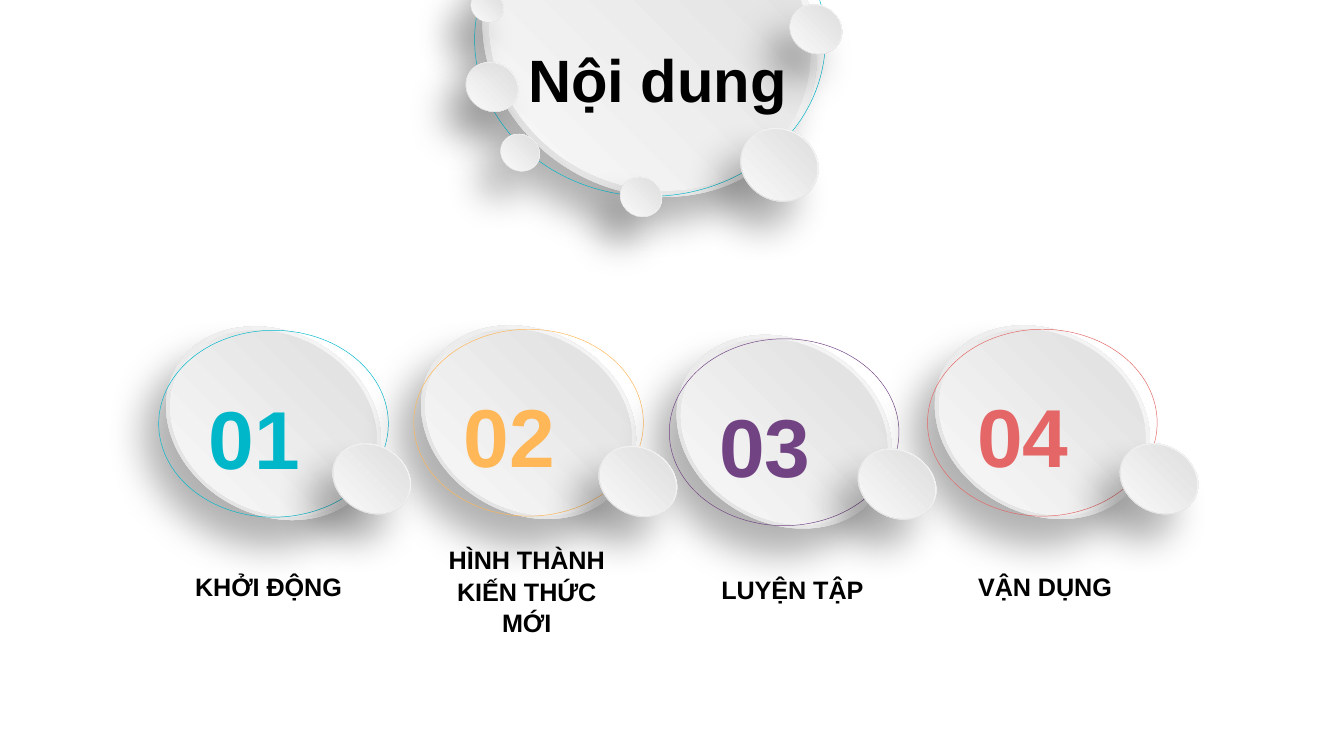
import pptx
import pptx.dml.color
import pptx.enum.shapes
import pptx.enum.text
import pptx.oxml
import pptx.oxml.ns
import pptx.util

Cm, Pt = pptx.util.Cm, pptx.util.Pt
RGBColor = pptx.dml.color.RGBColor
MSO_SHAPE = pptx.enum.shapes.MSO_SHAPE
PP_ALIGN = pptx.enum.text.PP_ALIGN
qn = pptx.oxml.ns.qn

BLACK = RGBColor(0x00, 0x00, 0x00)
WHITE = RGBColor(0xFF, 0xFF, 0xFF)
NEAR_WHITE = RGBColor(0xFE, 0xFE, 0xFE)
GREY = RGBColor(0xD9, 0xD9, 0xD9)
TEAL = RGBColor(0x00, 0xB7, 0xCA)
ORANGE = RGBColor(0xFF, 0xB7, 0x57)
PURPLE = RGBColor(0x71, 0x43, 0x83)
RED = RGBColor(0xE5, 0x66, 0x66)

NS = 'xmlns:a="http://schemas.openxmlformats.org/drawingml/2006/main"'
CORNER_PATH = (f'<a:path {NS} path="circle">'
               '<a:fillToRect l="100000" b="100000"/></a:path>')
SHADOW = (f'<a:outerShdw {NS} blurRad="{Pt(20)}" dist="{Pt(19)}" '
          f'dir="{130 * 60000}" algn="ctr" rotWithShape="0">'
          '<a:srgbClr val="000000"><a:alpha val="30000"/></a:srgbClr>'
          '</a:outerShdw>')

TITLE_KNOBS = [  # left, top, width, height
    (8.79, 1.19, 1.02, 0.91),
    (14.91, 0.1, 1.02, 0.91),
    (11.71, 3.35, 0.81, 0.74),
    (13.97, 2.44, 1.52, 1.35),
    (8.89, -0.15, 0.64, 0.56),
    (9.45, 2.54, 0.76, 0.69),
]
SECTIONS = [  # colour, disc corner, knob corner, label, label box, wrap
    (TEAL, (3.05, 6.27), (6.25, 8.41),
     "KHỞI ĐỘNG", (3.07, 10.64, 4.01, 0.84), True),
    (ORANGE, (7.87, 6.25), (11.28, 8.46),
     "HÌNH THÀNH KIẾN THỨC MỚI", (8.1, 10.13, 3.71, 1.98), True),
    (PURPLE, (12.7, 6.43), (16.18, 8.51),
     "LUYỆN TẬP", (13.36, 10.69, 3.23, 0.84), False),
    (RED, (17.58, 6.25), (21.13, 8.41),
     "VẬN DỤNG", (16.79, 10.64, 5.92, 0.84), True),
]


class SlideBuilder:
    TILT = 29.5
    INNER = 0.96

    def __init__(self, s):
        self.s = s

    def shape(self, kind, box):
        sp = self.s.shapes.add_shape(kind, *map(Cm, box))
        sp.shadow.inherit = False
        return sp

    def gradient_ellipse(self, box, near, far):
        """Tilted ellipse shaded from its top right corner outwards."""
        sp = self.shape(MSO_SHAPE.OVAL, box)
        sp.rotation = self.TILT
        sp.fill.gradient()
        for stop, position, color in zip(sp.fill.gradient_stops, (0, 1), (near, far)):
            stop.position = position
            stop.color.rgb = color
        lin = next(sp._element.iter(qn("a:lin")))
        lin.getparent().replace(lin, pptx.oxml.parse_xml(CORNER_PATH))
        sp.line.fill.background()
        return sp

    def disc(self, x, y, w, h):
        """Raised disc: a shadowed rim with a smaller face centred on it."""
        rim = self.gradient_ellipse((x, y, w, h), WHITE, GREY)
        effects = rim._element.spPr.find(qn("a:effectLst"))
        effects.append(pptx.oxml.parse_xml(SHADOW))
        inset = (1 - self.INNER) / 2
        self.gradient_ellipse((x + w * inset, y + h * inset, w * self.INNER, h * self.INNER),
                              GREY, NEAR_WHITE)

    def ring(self, box, color):
        sp = self.shape(MSO_SHAPE.FLOWCHART_CONNECTOR, box)
        sp.fill.background()
        sp.line.color.rgb = color
        sp.line.width = Pt(0.25)

    def text(self, box, text, size, color=BLACK, align=PP_ALIGN.LEFT, wrap=True):
        tf = self.s.shapes.add_textbox(*map(Cm, box)).text_frame
        tf.word_wrap = wrap
        tf.auto_size = pptx.enum.text.MSO_AUTO_SIZE.SHAPE_TO_FIT_TEXT
        p = tf.paragraphs[0]
        p.alignment = align
        p.line_spacing = 1.05
        r = p.add_run()
        r.text = text
        for name, value in {"name": "Arial", "size": Pt(size), "bold": True}.items():
            setattr(r.font, name, value)
        r.font.color.rgb = color


def main():
    prs = pptx.Presentation()
    prs.slide_width, prs.slide_height = Cm(25.4), Cm(14.28)
    b = SlideBuilder(prs.slides.add_slide(prs.slide_layouts[6]))

    b.disc(9.04, -2.16, 6.48, 5.79)
    b.ring((8.97, -2.21, 6.63, 5.92), TEAL)
    for knob in TITLE_KNOBS:
        b.disc(*knob)
    b.text((9.73, 0.61, 6.3, 1.63), "Nội dung", 32)

    for number, (color, (x, y), _, label, box, wrap) in enumerate(SECTIONS, 1):
        b.disc(x, y, 4.24, 3.45)
        b.ring((x - 0.05, y - 0.03, 4.34, 3.53), color)
        b.text((x + 0.64, y + 0.82, 3, 2.13), f"{number:02}", 44, color)
        b.text(box, label, 13.5, align=PP_ALIGN.CENTER, wrap=wrap)
    for _, _, knob, *_ in SECTIONS:
        b.disc(*knob, 1.55, 1.27)

    prs.save("out.pptx")


if __name__ == "__main__":
    main()
